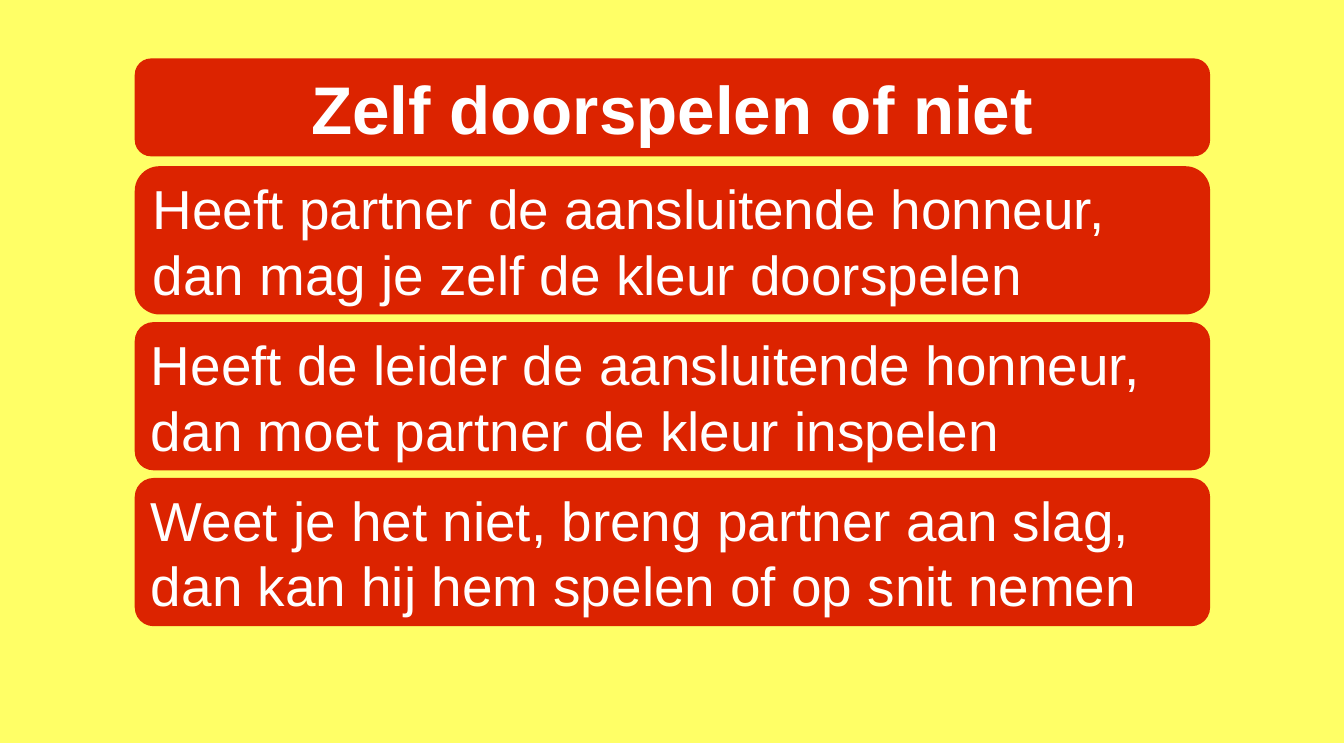
from pptx import Presentation
from pptx.dml.color import RGBColor
from pptx.enum.shapes import MSO_SHAPE
from pptx.enum.text import MSO_ANCHOR, PP_ALIGN
from pptx.util import Inches, Pt

COLORS = {"background": "FFFF66", "panel": "DC2300", "text": "FFFFFF"}

presentation = Presentation()
presentation.slide_width = Inches(14.96)
presentation.slide_height = Inches(8.27)
slide = presentation.slides.add_slide(presentation.slide_layouts[6])
slide.background.fill.solid()
slide.background.fill.fore_color.rgb = RGBColor.from_string(COLORS["background"])


def add_panel(text, top, height=1.65, corner=0.127, size=44, bold=False,
              align=PP_ALIGN.LEFT, wrap=True):
    shape = slide.shapes.add_shape(
        MSO_SHAPE.ROUNDED_RECTANGLE,
        Inches(1.5), Inches(top), Inches(11.97), Inches(height))
    shape.adjustments[0] = corner
    shape.shadow.inherit = False
    shape.fill.solid()
    shape.fill.fore_color.rgb = RGBColor.from_string(COLORS["panel"])
    shape.line.fill.background()
    frame = shape.text_frame
    frame.word_wrap = wrap
    frame.vertical_anchor = MSO_ANCHOR.MIDDLE
    frame.margin_left = frame.margin_right = Inches(0.12)
    frame.margin_top = frame.margin_bottom = Inches(0.06)
    paragraph = frame.paragraphs[0]
    paragraph.alignment = align
    run = paragraph.add_run()
    run.text = text
    run.font.name = "Arial"
    run.font.size = Pt(size)
    run.font.bold = bold
    run.font.color.rgb = RGBColor.from_string(COLORS["text"])


add_panel("Zelf doorspelen of niet", 0.65, height=1.09, corner=0.167,
          size=54, bold=True, align=PP_ALIGN.CENTER, wrap=False)

rules = [
    ("Heeft partner de aansluitende honneur, dan mag je zelf de kleur doorspelen", 0.167),
    ("Heeft de leider de aansluitende honneur, dan moet partner de kleur inspelen", 0.127),
    ("Weet je het niet, breng partner aan slag, dan kan hij hem spelen of op snit nemen", 0.127),
]
for index, (text, corner) in enumerate(rules):
    add_panel(text, 1.85 + index * 1.735, corner=corner)

presentation.save("out.pptx")
